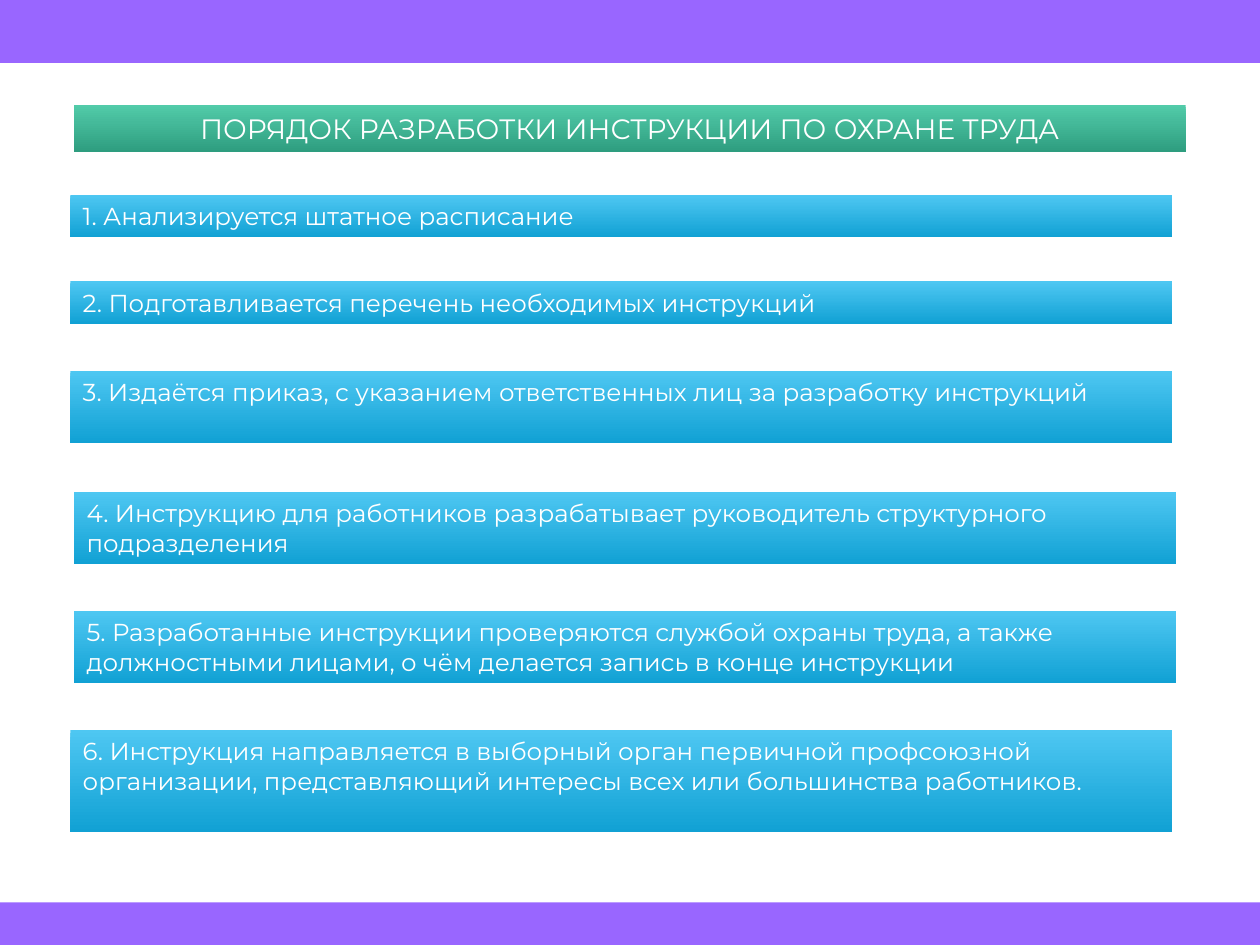
from dataclasses import dataclass

from pptx import Presentation
from pptx.dml.color import RGBColor
from pptx.enum.shapes import MSO_SHAPE
from pptx.enum.text import MSO_ANCHOR, PP_ALIGN
from pptx.util import Pt


@dataclass(frozen=True)
class Theme:
    band: str = "9966FF"
    green: tuple = ("52CBA9", "2E9D7F")
    blue: tuple = ("4EC7F2", "11A1D4")
    text: str = "FFFFFF"
    font: str = "Montserrat"
    title: float = 16
    body: float = 14


THEME = Theme()
WIDTH, HEIGHT = 720, 540
LEFT, INSET = 40.2, 42.4  # the two left edges in use
STEP_W = 629.6
ONE, TWO, THREE = 24.3, 41.2, 58.2  # box heights by number of lines

STEPS = [  # left, top, height, text
    (LEFT, 111.4, ONE, "Анализируется штатное расписание"),
    (LEFT, 160.8, ONE, "Подготавливается перечень необходимых инструкций"),
    (LEFT, 212, TWO, "Издаётся приказ, с указанием ответственных лиц "
     "за разработку инструкций"),
    (INSET, 281.2, TWO, "Инструкцию для работников разрабатывает "
     "руководитель структурного подразделения"),
    (INSET, 349.2, TWO, "Разработанные инструкции проверяются службой охраны "
     "труда, а также должностными лицами, о чём делается запись в конце "
     "инструкции"),
    (LEFT, 417.2, THREE, "Инструкция направляется в выборный орган первичной "
     "профсоюзной организации, представляющий интересы всех или большинства "
     "работников."),
]


def add_rect(slide, left, top, width, height):
    shape = slide.shapes.add_shape(
        MSO_SHAPE.RECTANGLE, Pt(left), Pt(top), Pt(width), Pt(height))
    shape.shadow.inherit = False
    shape.line.fill.background()
    return shape


def add_band(slide, top, height):
    fill = add_rect(slide, 0, top, WIDTH, height).fill
    fill.solid()
    fill.fore_color.rgb = RGBColor.from_string(THEME.band)


def put_text(shape, text, size=THEME.body, align=PP_ALIGN.LEFT):
    frame = shape.text_frame
    frame.word_wrap = True
    frame.vertical_anchor = MSO_ANCHOR.TOP
    para = frame.paragraphs[0]
    para.alignment = align
    run = para.add_run()
    run.text = text
    run.font.name = THEME.font
    run.font.size = Pt(size)
    run.font.color.rgb = RGBColor.from_string(THEME.text)


def add_box(slide, left, top, width, height, colors, text, **style):
    """Add a text box shaded from the first colour at the top to the last."""
    shape = add_rect(slide, left, top, width, height)
    shape.fill.gradient()
    shape.fill.gradient_angle = 270
    for stop, color in zip(shape.fill.gradient_stops, colors):
        stop.color.rgb = RGBColor.from_string(color)
    put_text(shape, text, **style)


def main():
    deck = Presentation()
    deck.slide_width, deck.slide_height = Pt(WIDTH), Pt(HEIGHT)
    slide = deck.slides.add_slide(deck.slide_layouts[6])
    add_band(slide, 0, 36)
    add_band(slide, 515.7, HEIGHT - 515.7)
    add_box(slide, INSET, 60.2, WIDTH - 2 * INSET, 26.6, THEME.green,
            "ПОРЯДОК РАЗРАБОТКИ ИНСТРУКЦИИ ПО ОХРАНЕ ТРУДА",
            size=THEME.title, align=PP_ALIGN.CENTER)
    for num, (left, top, height, text) in enumerate(STEPS, 1):
        add_box(slide, left, top, STEP_W, height, THEME.blue,
                f"{num}. {text}")
    deck.save("out.pptx")


if __name__ == "__main__":
    main()
